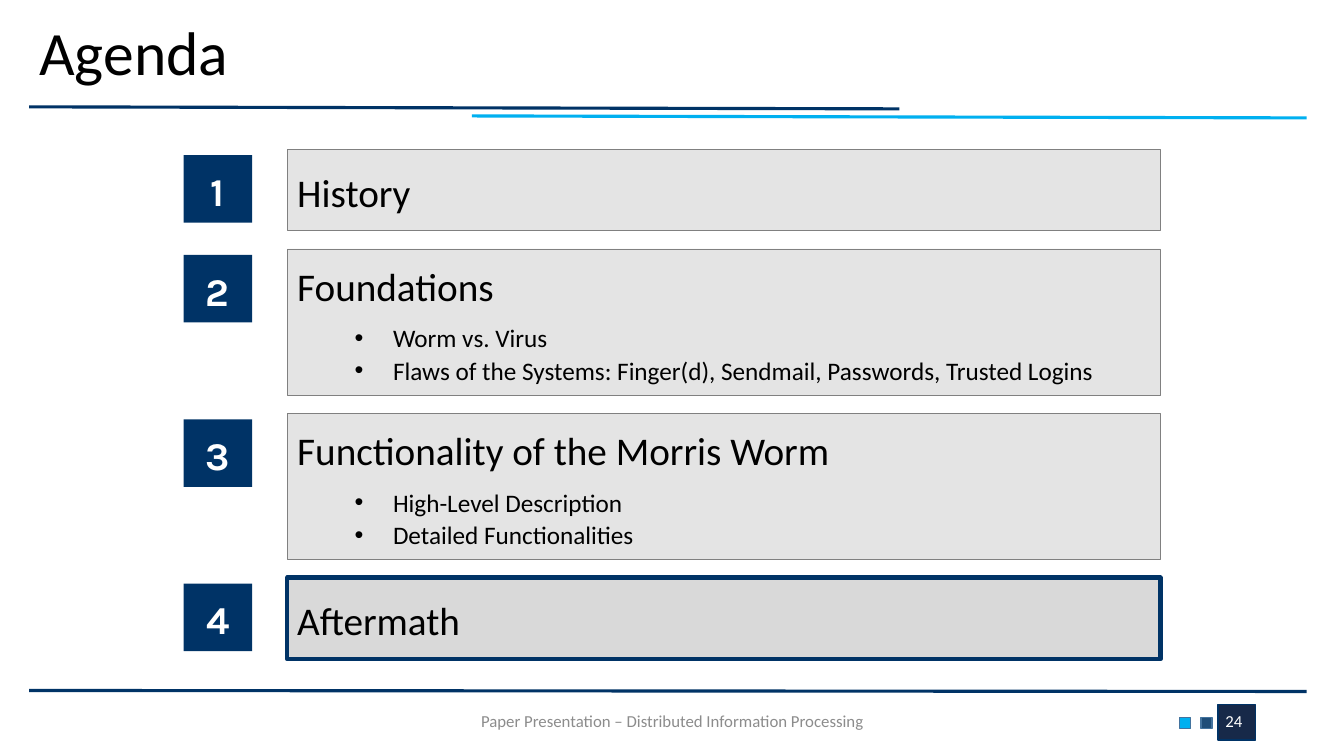
from lxml.etree import SubElement
from pptx import Presentation
from pptx.dml.color import RGBColor
from pptx.enum.shapes import MSO_CONNECTOR, MSO_SHAPE
from pptx.enum.text import MSO_ANCHOR, MSO_AUTO_SIZE, PP_ALIGN
from pptx.oxml.ns import qn
from pptx.util import Inches, Pt

NAVY = RGBColor(0x00, 0x33, 0x66)
SKY = RGBColor(0x00, 0xB0, 0xF0)
INK = RGBColor(0x17, 0x29, 0x49)
STEEL = RGBColor(0x1F, 0x4E, 0x79)
EDGE = RGBColor(0x43, 0x73, 0x9E)
PALE = RGBColor(0xD9, 0xD9, 0xD9)
GRAY = RGBColor(0x80, 0x80, 0x80)
MUTED = RGBColor(0x8C, 0x8C, 0x8C)
BLACK = RGBColor(0, 0, 0)
WHITE = RGBColor(255, 255, 255)


class Deck:
    """Holds the text style and the current slide."""
    face = "Calibri"
    head = 28
    small = 18

    def __init__(self):
        self.file = Presentation()
        self.file.slide_width = Inches(13.33)
        self.file.slide_height = Inches(7.5)
        self.slide = self.file.slides.add_slide(self.file.slide_layouts[5])

    def style(self, para, size, color, face=None, bold=False):
        for run in para.runs:
            run.font.size = Pt(size)
            run.font.name = face or self.face
            run.font.bold = bold
            run.font.color.rgb = color

    def title(self, text, *box):
        shape = self.slide.shapes.title
        shape.left, shape.top, shape.width, shape.height = map(Inches, box)
        frame = shape.text_frame
        frame.text = text
        frame.auto_size = MSO_AUTO_SIZE.NONE
        frame.vertical_anchor = MSO_ANCHOR.MIDDLE
        para = frame.paragraphs[0]
        para.alignment = PP_ALIGN.LEFT
        para.line_spacing = 0.9
        self.style(para, 44, BLACK)

    def rule(self, x1, y1, x2, y2, color):
        line = self.slide.shapes.add_connector(
            MSO_CONNECTOR.STRAIGHT, *map(Inches, (x1, y1, x2, y2)))
        line.line.color.rgb = color
        line.line.width = Pt(2.25)
        SubElement(line._element.spPr, qn("a:effectLst"))

    def rect(self, box, fill, edge=None, width=1, alpha=None):
        shape = self.slide.shapes.add_shape(
            MSO_SHAPE.RECTANGLE, *map(Inches, box))
        shape.shadow.inherit = False
        shape.fill.solid()
        shape.fill.fore_color.rgb = fill
        if alpha:
            tint = shape._element.spPr.find(".//" + qn("a:srgbClr"))
            SubElement(tint, qn("a:alpha"), val=str(alpha * 1000))
        if edge is None:
            shape.line.fill.background()
        else:
            shape.line.color.rgb = edge
            shape.line.width = Pt(width)
        return shape

    def label(self, box, text, color, align):
        frame = self.slide.shapes.add_textbox(*map(Inches, box)).text_frame
        frame.word_wrap = True
        frame.vertical_anchor = MSO_ANCHOR.MIDDLE
        frame.text = text
        frame.paragraphs[0].alignment = align
        self.style(frame.paragraphs[0], 12, color)

    def lead(self, shape, text, color, align, face=None, bold=False):
        frame = shape.text_frame
        frame.word_wrap = True
        frame.vertical_anchor = MSO_ANCHOR.MIDDLE
        frame.text = text
        para = frame.paragraphs[0]
        para.alignment = align
        para.line_spacing = 1.07
        para.space_after = Pt(8)
        self.style(para, self.head, color, face, bold)

    def bullet(self, shape, text):
        para = shape.text_frame.add_paragraph()
        para.text = text
        para.level = 1
        props = para._p.get_or_add_pPr()
        props.set("marL", str(Inches(0.95)))
        props.set("indent", str(Inches(-0.38)))
        SubElement(props, qn("a:buFont"), typeface="Arial")
        SubElement(props, qn("a:buChar"), char="•")
        para.alignment = PP_ALIGN.LEFT
        para.line_spacing = 1.07
        self.style(para, self.small, BLACK)

    def topic(self, num, top, high, name, points, now):
        badge = self.rect((1.82, top + 0.06, 0.68, 0.67), NAVY)
        self.lead(badge, str(num), WHITE, PP_ALIGN.CENTER, "Karla", True)
        look = (NAVY, 3) if now else (GRAY, 0.5, 70)
        panel = self.rect((2.85, top, 8.66, high), PALE, *look)
        self.lead(panel, name, BLACK, PP_ALIGN.LEFT)
        for point in points:
            self.bullet(panel, point)


TOPICS = [
    ("History", []),
    ("Foundations", [
        "Worm vs. Virus",
        "Flaws of the Systems: Finger(d), Sendmail, Passwords, Trusted Logins",
    ]),
    ("Functionality of the Morris Worm", [
        "High-Level Description", "Detailed Functionalities"]),
    ("Aftermath", []),
]
CURRENT = 4


def main():
    deck = Deck()

    # Rules and title
    deck.rule(0.29, 1.06, 8.92, 1.08, NAVY)
    deck.rule(0.29, 6.85, 12.96, 6.86, NAVY)
    deck.rule(4.68, 1.15, 12.96, 1.17, SKY)
    deck.title("Agenda", 0.29, 0.09, 12.67, 0.93)

    # Footer
    deck.rect((12.08, 6.99, 0.37, 0.35), INK, NAVY)
    for left, fill in ((11.91, STEEL), (11.7, SKY)):
        deck.rect((left, 7.12, 0.11, 0.11), fill, EDGE)
    deck.label((9.42, 6.95, 3, 0.4), "24", WHITE, PP_ALIGN.RIGHT)
    deck.label((4.42, 6.95, 4.5, 0.4),
               "Paper Presentation – Distributed Information Processing",
               MUTED, PP_ALIGN.CENTER)

    # Agenda topics, stacked with an equal gap
    top, gap = 1.48, 0.18
    for num, (name, points) in enumerate(TOPICS, 1):
        high = 1.45 if points else 0.81
        deck.topic(num, top, high, name, points, num == CURRENT)
        top += high + gap

    deck.file.save("out.pptx")


if __name__ == "__main__":
    main()
